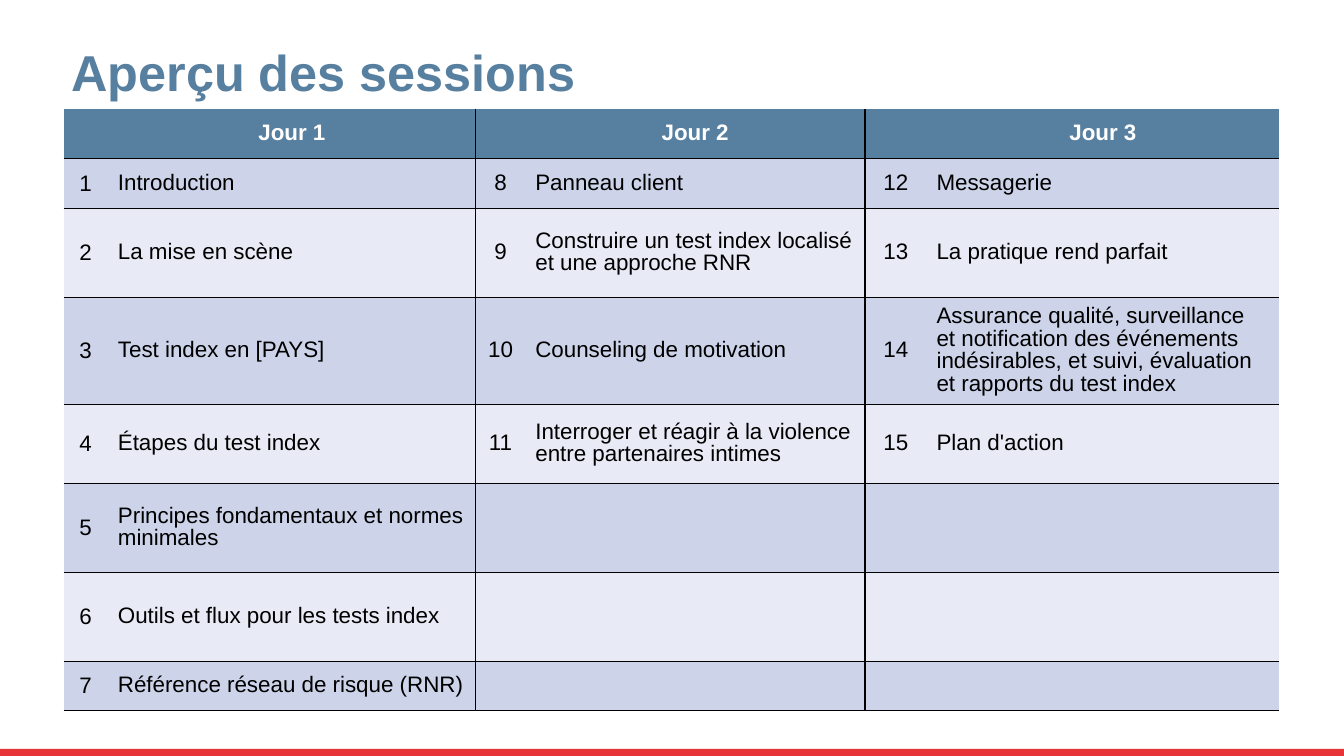
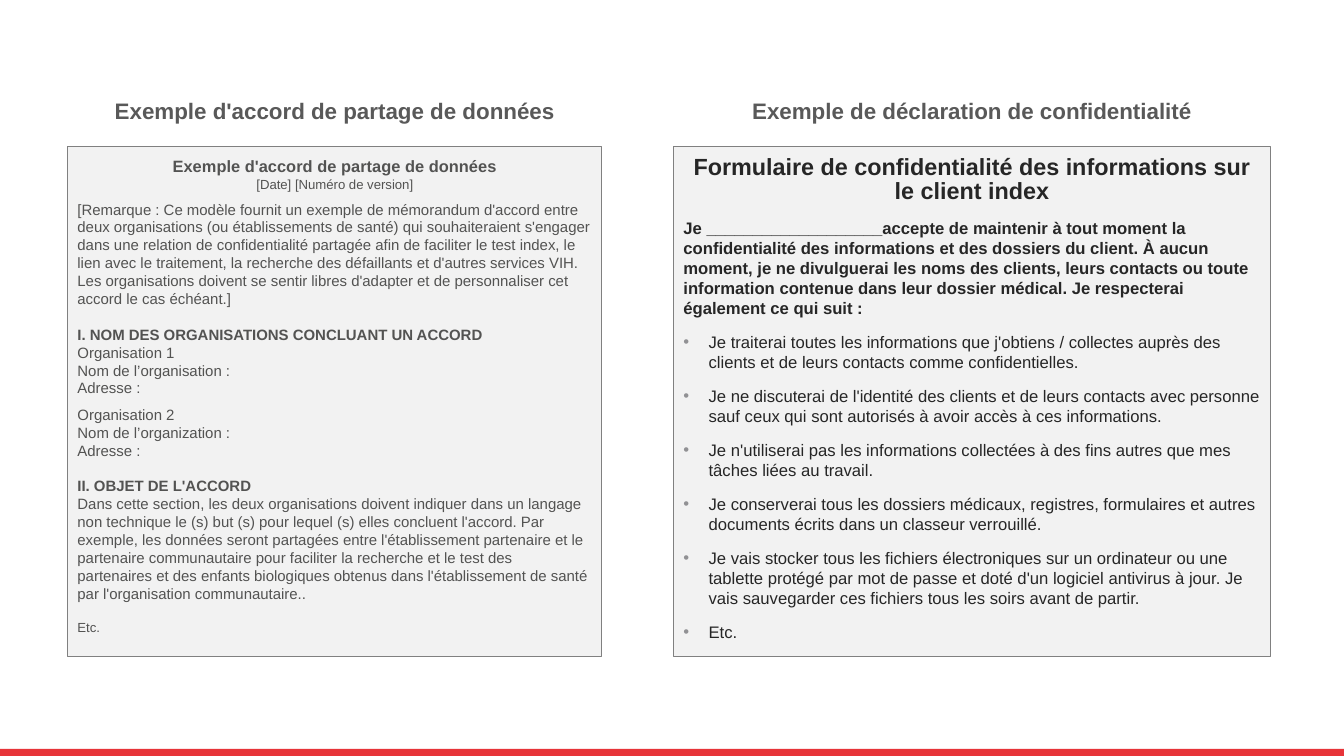
from lxml import etree
from pptx import Presentation
from pptx.dml.color import RGBColor
from pptx.enum.shapes import MSO_SHAPE
from pptx.enum.text import MSO_ANCHOR, PP_ALIGN
from pptx.oxml.ns import qn
from pptx.util import Inches, Pt

RECT = MSO_SHAPE.RECTANGLE
TOP, MIDDLE = MSO_ANCHOR.TOP, MSO_ANCHOR.MIDDLE
LEFT, CENTER = PP_ALIGN.LEFT, PP_ALIGN.CENTER

FONT = "Arial"
RED = RGBColor(0xE7, 0x34, 0x39)
BLUE = RGBColor(0x57, 0x7F, 0x9F)
WHITE = RGBColor(0xFF, 0xFF, 0xFF)
BLACK = RGBColor(0x00, 0x00, 0x00)
BANDS = [RGBColor(0xE8, 0xEB, 0xF5), RGBColor(0xCD, 0xD4, 0xEA)]
PANEL = RGBColor(0xF2, 0xF2, 0xF2)
EDGE = RGBColor(0x80, 0x80, 0x80)
GREY = RGBColor(0x59, 0x59, 0x59)
SLATE = RGBColor(0x53, 0x53, 0x52)
DARK = RGBColor(0x26, 0x26, 0x26)
BULLET = RGBColor(0x91, 0x91, 0x94)


def write(frame, text, size, color, bold=False, align=LEFT, lead=1.0, gap=0):
    para = frame.add_paragraph() if frame.text else frame.paragraphs[0]
    para.alignment = align
    para.line_spacing = lead
    para.space_before = Pt(gap)
    run = para.add_run()
    run.text = text
    run.font.name = FONT
    run.font.size = Pt(size)
    run.font.bold = bold
    run.font.color.rgb = color
    return para


def block(slide, x, y, w, h, fill, line=None):
    shape = slide.shapes.add_shape(RECT, Inches(x), Inches(y), Inches(w), Inches(h))
    shape.shadow.inherit = False
    shape.fill.solid()
    shape.fill.fore_color.rgb = fill
    if line is None:
        shape.line.fill.background()
    else:
        shape.line.color.rgb = line
        shape.line.width = Pt(0.75)
    frame = shape.text_frame
    frame.word_wrap = True
    frame.vertical_anchor = TOP
    frame.margin_top = frame.margin_bottom = Inches(0.1)
    return frame


deck = Presentation()
deck.slide_width = Inches(13.33)
deck.slide_height = Inches(7.5)
blank = deck.slide_layouts[6]
plan, forms = [deck.slides.add_slide(blank) for _ in range(2)]
for slide in (plan, forms):
    block(slide, 0, 7.43, 13.33, 0.08, RED)

titles = [
    (plan, 0.61, 0.31, 11.5, 0.87, "Aperçu des sessions", 36, BLUE, LEFT),
    (forms, 0.67, 0.77, 5.3, 0.69,
     "Exemple d'accord de partage de données", 16, GREY, CENTER),
    (forms, 6.68, 0.86, 5.92, 0.51,
     "Exemple de déclaration de confidentialité", 16, GREY, CENTER),
]
for slide, x, y, w, h, text, size, color, align in titles:
    box = slide.shapes.add_textbox(Inches(x), Inches(y), Inches(w), Inches(h))
    frame = box.text_frame
    frame.word_wrap = True
    frame.vertical_anchor = MIDDLE
    write(frame, text, size, color, True, align, 0.9)

days = [
    ("Jour 1", [
        "Introduction",
        "La mise en scène",
        "Test index en [PAYS]",
        "Étapes du test index",
        "Principes fondamentaux et normes minimales",
        "Outils et flux pour les tests index",
        "Référence réseau de risque (RNR)",
    ]),
    ("Jour 2", [
        "Panneau client",
        "Construire un test index localisé et une approche RNR",
        "Counseling de motivation",
        "Interroger et réagir à la violence entre partenaires intimes",
    ]),
    ("Jour 3", [
        "Messagerie",
        "La pratique rend parfait",
        "Assurance qualité, surveillance et notification des événements "
        "indésirables, et suivi, évaluation et rapports du test index",
        "Plan d'action",
    ]),
]
widths = [0.44, 3.65, 0.49, 3.37, 0.61, 3.5]
heights = [0.49, 0.5, 0.88, 0.99, 0.79, 0.88, 0.88, 0.49]
table = plan.shapes.add_table(
    len(heights), len(widths), Inches(0.63), Inches(1.08),
    Inches(sum(widths)), Inches(sum(heights))).table
table.first_row = False
table.horz_banding = False
for col, width in zip(table.columns, widths):
    col.width = Inches(width)
for row, height in zip(table.rows, heights):
    row.height = Inches(height)

for r in range(len(heights)):
    for c in range(len(widths)):
        cell = table.cell(r, c)
        cell.vertical_anchor = MIDDLE
        props = cell._tc.get_or_add_tcPr()
        sides = {"L": c in (2, 4), "R": c in (1, 3), "T": r > 0, "B": True}
        for side, shown in sides.items():
            line = etree.SubElement(props, qn("a:ln" + side), w=str(Pt(1)))
            if shown:
                paint = etree.SubElement(line, qn("a:solidFill"))
                etree.SubElement(paint, qn("a:srgbClr"), val=str(BLACK))
            else:
                etree.SubElement(line, qn("a:noFill"))
        cell.fill.solid()
        cell.fill.fore_color.rgb = BANDS[r % 2] if r else BLUE

count = 0
for d, (day, topics) in enumerate(days):
    c = 2 * d
    write(table.cell(0, c + 1).text_frame, day, 16, WHITE, True, CENTER, 0.9)
    for r, topic in enumerate(topics, 1):
        count += 1
        lead = 0.9 if d else 1.0
        write(table.cell(r, c).text_frame, str(count), 16, BLACK, False, CENTER, lead)
        write(table.cell(r, c + 1).text_frame, topic, 16, BLACK, lead=0.9)

oath = block(forms, 6.68, 1.45, 5.92, 5.06, PANEL, EDGE)
write(oath, "Formulaire de confidentialité des informations sur le client index",
      16.7, DARK, True, CENTER, 0.85)
write(oath, "Je ___________________accepte de maintenir à tout moment la "
      "confidentialité des informations et des dossiers du client. À aucun moment, "
      "je ne divulguerai les noms des clients, leurs contacts ou toute information "
      "contenue dans leur dossier médical. Je respecterai également ce qui suit :",
      11.9, DARK, True, gap=10)
vows = [
    "Je traiterai toutes les informations que j'obtiens / collectes auprès des "
    "clients et de leurs contacts comme confidentielles.",
    "Je ne discuterai de l'identité des clients et de leurs contacts avec personne "
    "sauf ceux qui sont autorisés à avoir accès à ces informations.",
    "Je n'utiliserai pas les informations collectées à des fins autres que mes "
    "tâches liées au travail.",
    "Je conserverai tous les dossiers médicaux, registres, formulaires et autres "
    "documents écrits dans un classeur verrouillé.",
    "Je vais stocker tous les fichiers électroniques sur un ordinateur ou une "
    "tablette protégé par mot de passe et doté d'un logiciel antivirus à jour. Je "
    "vais sauvegarder ces fichiers tous les soirs avant de partir.",
    "Etc.",
]
for vow in vows:
    props = write(oath, vow, 11.9, DARK, gap=10)._p.get_or_add_pPr()
    props.set("marL", str(Inches(0.25)))
    props.set("indent", str(-Inches(0.25)))
    tint = etree.SubElement(props, qn("a:buClr"))
    etree.SubElement(tint, qn("a:srgbClr"), val=str(BULLET))
    etree.SubElement(props, qn("a:buFont"), typeface=FONT)
    etree.SubElement(props, qn("a:buChar"), char="•")

pact = block(forms, 0.67, 1.45, 5.3, 5.06, PANEL, EDGE)
write(pact, "Exemple d'accord de partage de données", 11.7, SLATE, True, CENTER)
write(pact, "[Date] [Numéro de version]", 9.4, SLATE, False, CENTER)
parts = [
    ("[Remarque : Ce modèle fournit un exemple de mémorandum d'accord entre deux "
     "organisations (ou établissements de santé) qui souhaiteraient s'engager dans "
     "une relation de confidentialité partagée afin de faciliter le test index, le "
     "lien avec le traitement, la recherche des défaillants et d'autres services "
     "VIH. Les organisations doivent se sentir libres d'adapter et de personnaliser "
     "cet accord le cas échéant.]", 10.7, False, 6),
    ("I. NOM DES ORGANISATIONS CONCLUANT UN ACCORD", 10.7, True, 12.5),
    ("Organisation 1", 10.7, False, 0),
    ("Nom de l’organisation :", 10.7, False, 0),
    ("Adresse :", 10.7, False, 0),
    ("Organisation 2", 10.7, False, 6),
    ("Nom de l’organization :", 10.7, False, 0),
    ("Adresse :", 10.7, False, 0),
    ("II. OBJET DE L'ACCORD", 10.7, True, 12.5),
    ("Dans cette section, les deux organisations doivent indiquer dans un langage "
     "non technique le (s) but (s) pour lequel (s) elles concluent l'accord. Par "
     "exemple, les données seront partagées entre l'établissement partenaire et le "
     "partenaire communautaire pour faciliter la recherche et le test des "
     "partenaires et des enfants biologiques obtenus dans l'établissement de santé "
     "par l'organisation communautaire..", 10.7, False, 0),
    ("Etc.", 9.4, False, 12),
]
for text, size, bold, gap in parts:
    write(pact, text, size, SLATE, bold, gap=gap)

deck.save("out.pptx")
